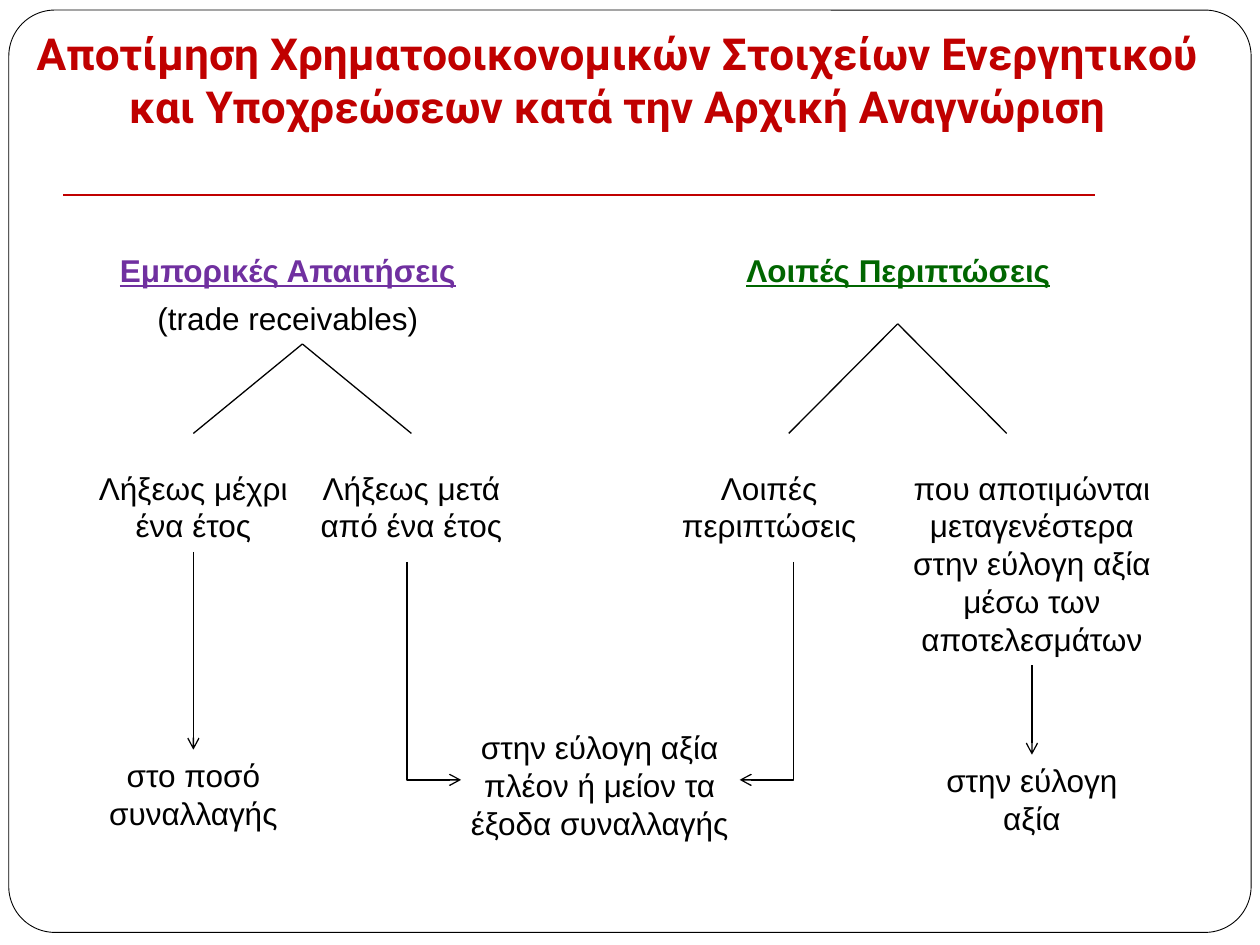
"""Build the slide on initial measurement of financial assets and liabilities."""
from dataclasses import dataclass
from typing import Optional

from lxml import etree
from pptx import Presentation
from pptx import util as u
from pptx.dml.color import RGBColor
from pptx.enum import shapes, text
from pptx.oxml.ns import qn

COLUMNS, ROWS = 100, 75
BOTTOM, TOP = 2, 0


@dataclass(frozen=True)
class Theme:
    ink: str = "000000"
    paper: str = "FFFFFF"
    accent: str = "C00000"
    trade: str = "7030A0"
    other: str = "006600"
    title_font: str = "Roboto"
    body_font: str = "Arial"
    title_size: float = 25.2
    body_size: float = 18
    frame_line: float = 0.5
    rule_line: float = 1.25
    tree_line: float = 0.75


@dataclass(frozen=True)
class Line:
    words: str
    color: str
    heading: bool = False


@dataclass(frozen=True)
class Label:
    lines: tuple[Line, ...]
    center: float
    top: float
    width: float
    height: float
    gap: float = 0


@dataclass(frozen=True)
class Fork:
    x: float
    top: float
    bottom: float = 34.4
    spread: float = 8.65


@dataclass(frozen=True)
class Elbow:
    x: float
    reach: float
    top: float = 44.6
    bottom: float = 61.9


THEME = Theme()
deck = Presentation()
deck.slide_width, deck.slide_height = u.Inches(10), u.Inches(7.5)
slide = deck.slides.add_slide(deck.slide_layouts[6])


def col(n: float) -> int:
    """Return the horizontal position of a grid column."""
    return round(deck.slide_width * n / COLUMNS)


def row(n: float) -> int:
    """Return the vertical position of a grid row."""
    return round(deck.slide_height * n / ROWS)


def leaf(words: str, center: float, top: float, width: float, height: float) -> Label:
    """Describe a plain one-paragraph label."""
    return Label((Line(words, THEME.ink),), center, top, width, height)


def draw_frame() -> None:
    """Draw the rounded border around the slide."""
    frame = slide.shapes.add_shape(
        shapes.MSO_SHAPE.ROUNDED_RECTANGLE, col(0.7), row(0.8), col(98.6), row(73.2))
    frame.adjustments[0] = 0.05
    frame.shadow.inherit = False
    frame.fill.solid()
    frame.fill.fore_color.rgb = RGBColor.from_string(THEME.paper)
    frame.line.color.rgb = RGBColor.from_string(THEME.ink)
    frame.line.width = u.Pt(THEME.frame_line)


def draw_title(words: str) -> None:
    """Write the bottom-anchored slide title."""
    title = slide.shapes.add_textbox(0, row(2.1), col(98), row(9.4)).text_frame
    title.word_wrap = True
    title.vertical_anchor = text.MSO_ANCHOR.BOTTOM
    title.margin_bottom = u.Inches(0.1)
    heading = title.paragraphs[0]
    heading.text = words
    heading.alignment = text.PP_ALIGN.CENTER
    heading.font.name, heading.font.size = THEME.title_font, u.Pt(THEME.title_size)
    heading.font.bold = True
    heading.font.color.rgb = RGBColor.from_string(THEME.accent)


def draw_label(label: Label):
    """Write a centred label and return its box."""
    box = slide.shapes.add_textbox(
        col(label.center - label.width / 2), row(label.top), col(label.width), row(label.height))
    frame = box.text_frame
    frame.word_wrap = True
    frame.auto_size = text.MSO_AUTO_SIZE.SHAPE_TO_FIT_TEXT
    for index, line in enumerate(label.lines):
        paragraph = frame.add_paragraph() if index else frame.paragraphs[0]
        paragraph.text = line.words
        paragraph.alignment = text.PP_ALIGN.CENTER
        paragraph.space_after = u.Pt(label.gap)
        font = paragraph.font
        font.name, font.size = THEME.body_font, u.Pt(THEME.body_size)
        font.bold = font.underline = line.heading
        font.color.rgb = RGBColor.from_string(line.color)
    return box


def draw_line(x1: float, y1: float, x2: float, y2: float, arrow: bool = False,
              color: str = THEME.ink, width: float = THEME.tree_line,
              kind: shapes.MSO_CONNECTOR = shapes.MSO_CONNECTOR.STRAIGHT):
    """Draw a connector between two grid points."""
    link = slide.shapes.add_connector(kind, col(x1), row(y1), col(x2), row(y2))
    link.line.color.rgb = RGBColor.from_string(color)
    link.line.width = u.Pt(width)
    if arrow:
        etree.SubElement(link.line._get_or_add_ln(), qn("a:tailEnd"), type="arrow")
    etree.SubElement(link._element.spPr, qn("a:effectLst"))
    return link


def draw_fork(fork: Fork) -> None:
    """Draw the two branches leaving one heading."""
    for side in (-1, 1):
        draw_line(fork.x, fork.top, fork.x + side * fork.spread, fork.bottom)


def draw_elbow(elbow: Elbow) -> None:
    """Draw an arrow that goes down and then turns sideways."""
    turn = 1 if elbow.reach > 0 else -1
    x, y = elbow.x + elbow.reach / 2, (elbow.top + elbow.bottom) / 2
    along, across = (elbow.bottom - elbow.top) / 2, abs(elbow.reach) / 2
    link = draw_line(x + turn * along, y - across, x - turn * along, y + across,
                     arrow=True, kind=shapes.MSO_CONNECTOR.ELBOW)
    properties = link._element.spPr
    quarter = 270 if turn > 0 else 90
    properties.find(qn("a:xfrm")).set("rot", str(quarter * 60000))
    guides = properties.find(qn("a:prstGeom")).get_or_add_avLst()
    etree.SubElement(guides, qn("a:gd"), name="adj1", fmla="val 100000")


def draw_arrow(source, x: float, top: float, bottom: float, target: Optional[object] = None) -> None:
    """Draw a downward arrow from a label, joined to its target if given."""
    link = draw_line(x, top, x, bottom, arrow=True)
    link.begin_connect(source, BOTTOM)
    if target is not None:
        link.end_connect(target, TOP)


def main() -> None:
    """Draw the decision tree and save the deck."""
    draw_frame()
    draw_title("Αποτίμηση Χρηματοοικονομικών Στοιχείων Ενεργητικού "
               "και Υποχρεώσεων κατά την Αρχική Αναγνώριση")
    draw_line(5, 15.5, 86.9, 15.5, color=THEME.accent, width=THEME.rule_line)
    draw_label(Label((Line("Εμπορικές Απαιτήσεις", THEME.trade, True),
                      Line("(trade receivables)", THEME.ink)), 22.85, 19.4, 30.7, 7.9, 6))
    draw_label(Label((Line("Λοιπές Περιπτώσεις", THEME.other, True),), 71.3, 19.4, 26.8, 4, 6))
    for fork in (Fork(24, 27.3), Fork(71.25, 25.7)):
        draw_fork(fork)

    short_term, _, _, fair_value, _, amount, value = map(draw_label, (
        leaf("Λήξεως μέχρι ένα έτος", 15.35, 36.7, 17.3, 7.1),
        leaf("Λήξεως μετά από ένα έτος", 32.65, 36.7, 17.3, 7.1),
        leaf("Λοιπές περιπτώσεις", 61.05, 36.7, 17.3, 7.1),
        leaf("που αποτιμώνται μεταγενέστερα στην εύλογη αξία μέσω των αποτελεσμάτων",
             81.9, 36.7, 22.8, 16.1),
        leaf("στην εύλογη αξία πλέον ή μείον τα έξοδα συναλλαγής", 47.6, 57.3, 23.6, 10.1),
        leaf("στο ποσό συναλλαγής", 15.35, 59.5, 17.3, 7.1),
        leaf("στην εύλογη αξία", 81.9, 59.9, 16.5, 7.1)))
    for elbow in (Elbow(32.3, 4.3), Elbow(63, -4.3)):
        draw_elbow(elbow)
    draw_arrow(short_term, 15.35, 43.8, 59.1, amount)
    draw_arrow(fair_value, 81.9, 52.8, 59.9, value)
    deck.save("out.pptx")


if __name__ == "__main__":
    main()
